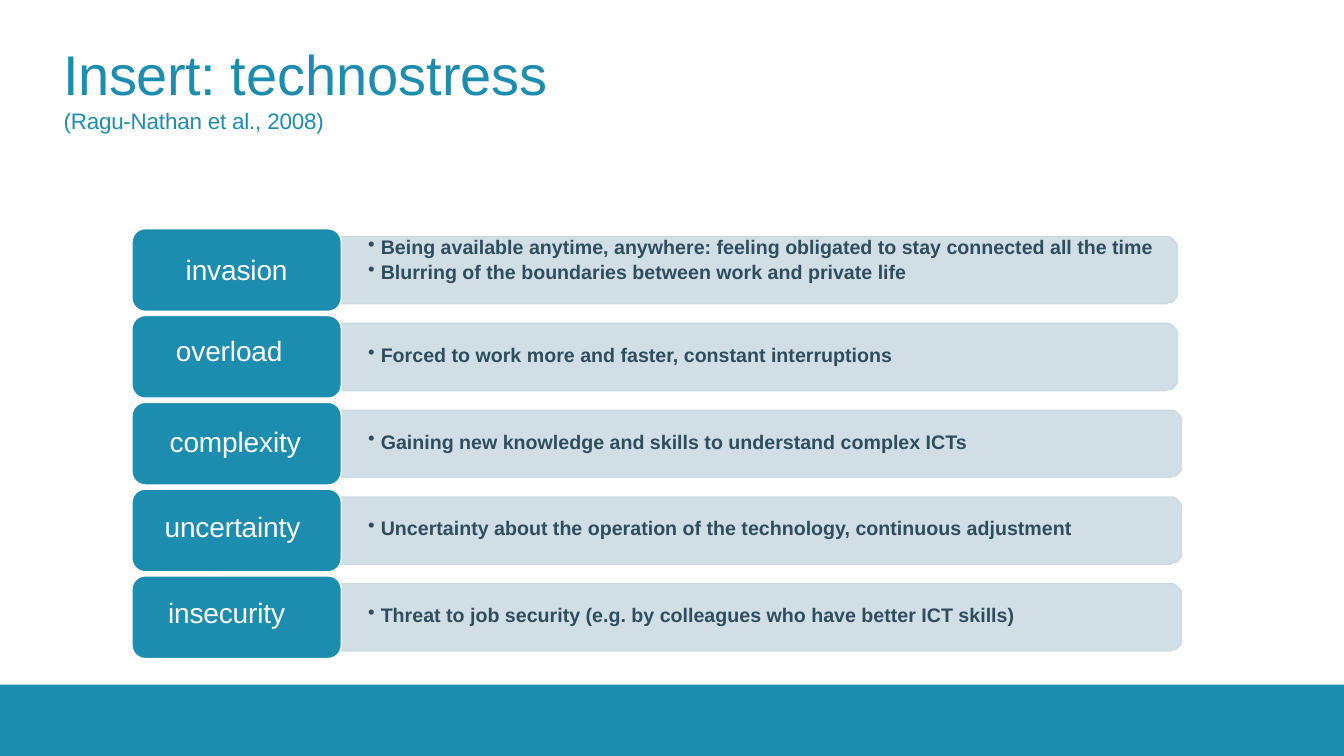
from math import cos, pi, sin

from lxml.etree import SubElement
from pptx import Presentation
from pptx.dml.color import RGBColor
from pptx.enum.shapes import MSO_SHAPE
from pptx.enum.text import MSO_ANCHOR, PP_ALIGN
from pptx.oxml.ns import qn
from pptx.util import Pt

TEAL = RGBColor(0x1D, 0x8D, 0xAF)
BAND = RGBColor(0x1D, 0x8D, 0xB0)
PALE = RGBColor(0xCC, 0xDB, 0xE3)
SLATE = RGBColor(0x2E, 0x4D, 0x5D)
WHITE = RGBColor(0xFF, 0xFF, 0xFF)

ROW_STEP = 62
LABEL_LEFT, LABEL_TOP, LABEL_WIDTH, LABEL_HEIGHT = 94.3, 163.4, 149.5, 59
PANEL_LEFT, PANEL_TOP, PANEL_HEIGHT, PANEL_RADIUS = 243.4, 169.2, 47.5, 8

# Label, centre of its text, top of its text, right edge of the panel, points
ROWS = [
    ("invasion", 169, 180, 841,
     ["Being available anytime, anywhere: feeling obligated to stay connected all the time",
      "Blurring of the boundaries between work and private life"]),
    ("overload", 163.7, 238.3, 841,
     ["Forced to work more and faster, constant interruptions"]),
    ("complexity", 168, 303, 844,
     ["Gaining new knowledge and skills to understand complex ICTs"]),
    ("uncertainty", 166, 363.6, 844,
     ["Uncertainty about the operation of the technology, continuous adjustment"]),
    ("insecurity", 161.8, 425.5, 844,
     ["Threat to job security (e.g. by colleagues who have better ICT skills)"]),
]


def add_box(left, top, width, height):
    frame = slide.shapes.add_textbox(Pt(left), Pt(top), Pt(width), Pt(height)).text_frame
    frame.word_wrap = True
    frame.margin_left = frame.margin_top = frame.margin_right = frame.margin_bottom = 0
    return frame


def write_text(paragraph, text, size, color, bold=False, spacing=0):
    run = paragraph.add_run()
    run.text = text
    run.font.name = "Arial"
    run.font.size = Pt(size)
    run.font.bold = bold
    run.font.color.rgb = color
    if spacing:
        run.font._element.set("spc", str(round(spacing * 100)))


presentation = Presentation()
presentation.slide_width, presentation.slide_height = Pt(960), Pt(540)
slide = presentation.slides.add_slide(presentation.slide_layouts[6])

# Bottom band
band = slide.shapes.add_shape(MSO_SHAPE.RECTANGLE, 0, Pt(489), Pt(960), Pt(51))
band.shadow.inherit = False
band.fill.solid()
band.fill.fore_color.rgb = BAND
band.line.fill.background()

# Title and citation
title = add_box(45.4, 28.1, 869, 67)
title.vertical_anchor = MSO_ANCHOR.MIDDLE
heading = title.paragraphs[0]
heading.line_spacing = 1.01
write_text(heading, "Insert: ", 40, TEAL, spacing=-0.4)
write_text(heading, "technostress", 40, TEAL)
heading.add_line_break()
write_text(heading, "(Ragu-Nathan et al., 2008)", 16, TEAL, spacing=-0.1)

for row, (label, text_centre, text_top, panel_right, points) in enumerate(ROWS):
    offset = row * ROW_STEP

    # Panel, square on the left and rounded on the right
    top, bottom = PANEL_TOP + offset, PANEL_TOP + offset + PANEL_HEIGHT
    outline = [(PANEL_LEFT, bottom), (PANEL_LEFT, top)]
    for centre_y, start in ((top + PANEL_RADIUS, -pi / 2), (bottom - PANEL_RADIUS, 0)):
        for step in range(7):
            angle = start + step * pi / 12
            outline.append((panel_right - PANEL_RADIUS + PANEL_RADIUS * cos(angle),
                            centre_y + PANEL_RADIUS * sin(angle)))
    builder = slide.shapes.build_freeform(*outline[0], scale=Pt(1))
    builder.add_line_segments(outline[1:], close=True)
    panel = builder.convert_to_shape()
    panel.shadow.inherit = False
    panel.fill.solid()
    panel.fill.fore_color.rgb = PALE
    fill_color = panel._element.spPr.find(qn("a:solidFill"))[0]
    SubElement(fill_color, qn("a:alpha"), val="90000")
    panel.line.color.rgb = PALE
    panel.line.width = Pt(0.96)

    # Bulleted points
    several = len(points) > 1
    bullets = add_box(244, 169.9 if several else 182.8 + offset, panel_right - 249, 48 if several else 17)
    for index, point in enumerate(points):
        paragraph = bullets.paragraphs[0] if index == 0 else bullets.add_paragraph()
        properties = paragraph._p.get_or_add_pPr()
        properties.set("marL", str(Pt(28)))
        properties.set("indent", str(-Pt(9)))
        SubElement(properties, qn("a:buChar"), char="•")
        if several:
            paragraph.line_spacing = Pt(14.5)
        if index:
            paragraph.space_before = Pt(3.4)
        write_text(paragraph, point, 14, SLATE, bold=True)

    # Label tile and its text
    tile = slide.shapes.add_shape(MSO_SHAPE.ROUNDED_RECTANGLE, Pt(LABEL_LEFT), Pt(LABEL_TOP + offset),
                                  Pt(LABEL_WIDTH), Pt(LABEL_HEIGHT))
    tile.adjustments[0] = 0.16
    tile.shadow.inherit = False
    tile.fill.solid()
    tile.fill.fore_color.rgb = TEAL
    tile.line.color.rgb = WHITE
    tile.line.width = Pt(0.96)
    caption = add_box(text_centre - 55, text_top, 110, 23).paragraphs[0]
    caption.alignment = PP_ALIGN.CENTER
    write_text(caption, label, 20, WHITE, spacing=-0.1)

presentation.save("out.pptx")
